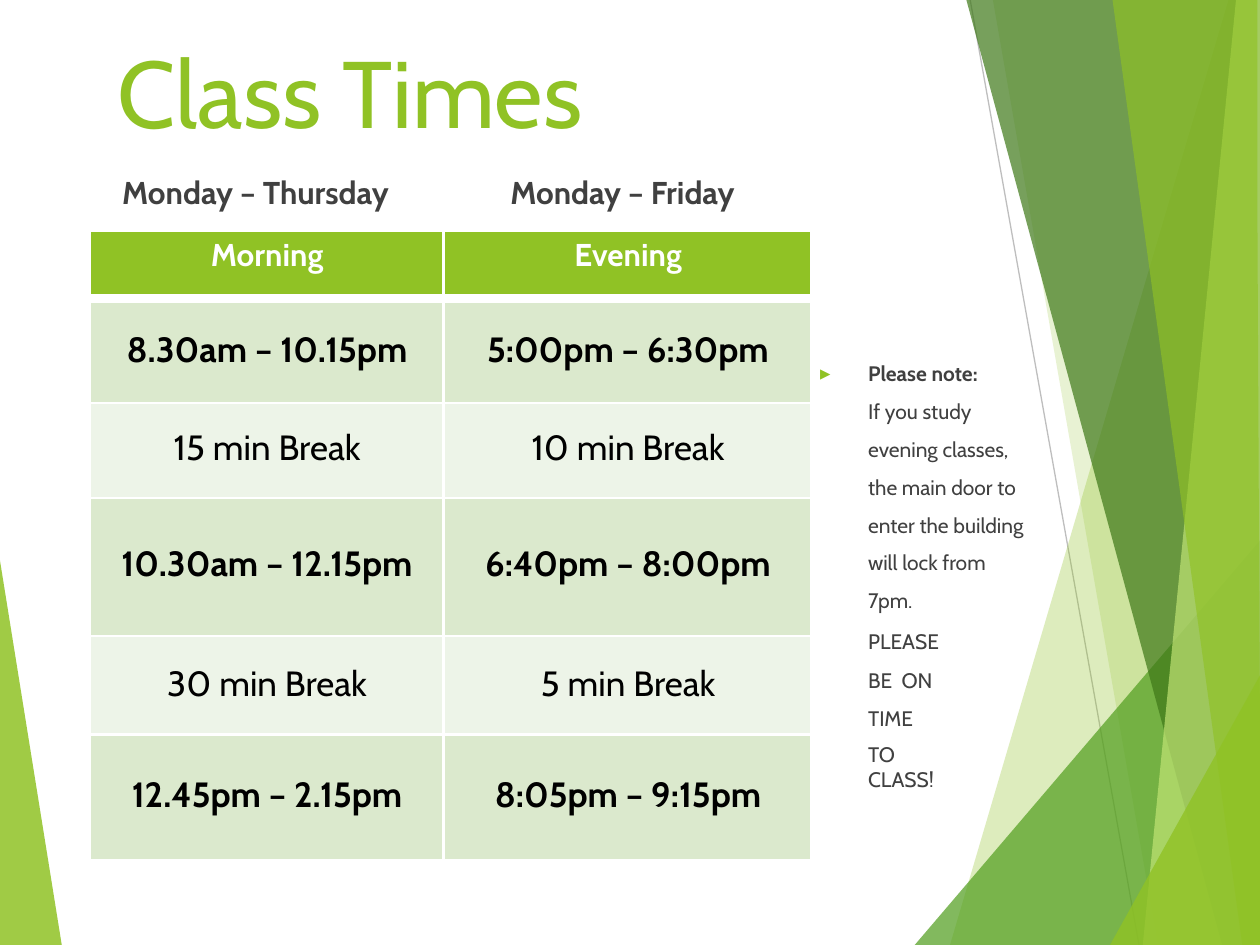
from dataclasses import dataclass

from lxml import etree
from pptx import Presentation
from pptx import util as u
from pptx.dml.color import RGBColor
from pptx.enum import shapes, text
from pptx.oxml import ns


@dataclass(frozen=True)
class Theme:
    font: str = "Cabin"
    bullet_font: str = "DejaVu Sans Mono"
    green: str = "90C225"
    leaf: str = "539F20"
    forest: str = "3E7818"
    lime: str = "C0E374"
    band: str = "DBE9CD"
    pale_band: str = "EDF4E8"
    text: str = "404040"
    black: str = "000000"
    white: str = "FFFFFF"
    rule: str = "BEBEBE"
    title_size: int = 54
    heading_size: int = 18
    cell_size: int = 20
    note_size: int = 12


THEME = Theme()

# Points, colour, opacity in percent
FACETS = [
    ([(9.75, 0), (7.54, 7.5), (10, 7.5), (10, 0)], THEME.green, 30),
    ([(10, 0), (7.88, 0), (9.19, 7.5), (10, 7.5)], THEME.green, 20),
    ([(10, 4.29), (7.26, 7.5), (10, 7.5)], THEME.leaf, 72),
    ([(10, 0), (7.67, 0), (9.7, 7.5), (10, 7.5)], THEME.forest, 70),
    ([(10, 0), (9.81, 0), (9.07, 7.5), (10, 7.5)], THEME.lime, 70),
    ([(9.98, 0), (8.83, 0), (9.86, 7.5), (10, 7.5), (10, 5.83), (9.98, 1.72)],
     THEME.green, 65),
    ([(10, 5.36), (8.81, 7.5), (10, 7.5)], THEME.green, 80),
    ([(0, 4.45), (0, 7.5), (0.49, 7.5)], THEME.green, 85),
]

COLUMN_WIDTHS = [2.8, 2.91]
# Row height, top margin, fill, text colour, bold, morning, evening
TIMETABLE = [
    (0.53, 0.03, THEME.green, THEME.white, True, "Morning", "Evening"),
    (0.83, 0.24, THEME.band, THEME.black, True, "8.30am – 10.15pm", "5:00pm – 6:30pm"),
    (0.75, 0.19, THEME.pale_band, THEME.black, False, "15 min Break", "10 min Break"),
    (1.1, 0.36, THEME.band, THEME.black, True, "10.30am – 12.15pm", "6:40pm – 8:00pm"),
    (0.78, 0.21, THEME.pale_band, THEME.black, False, "30 min Break", "5 min Break"),
    (0.99, 0.31, THEME.band, THEME.black, True, "12.45pm – 2.15pm", "8:05pm – 9:15pm"),
]

# Text, bold, line spacing, space before in points, right margin in inches
NOTES = [
    ("Please note:", True, 1.0, 0, 0),
    ("If you study evening classes, the main door to enter the building "
     "will lock from 7pm.", False, 1.5, 0.3, 0.08),
    ("PLEASE BE  ON TIME", False, u.Pt(22), 1.6, 0.7),
    ("TO CLASS!", False, 1.0, 5.7, 0.7),
]


def add_xml(parent, tag, **attributes):
    return etree.SubElement(parent, ns.qn(tag), attributes)


def style_runs(paragraph, size, color, bold=False):
    for run in paragraph.runs:
        run.font.name = THEME.font
        run.font.size = u.Pt(size)
        run.font.bold = bold
        run.font.color.rgb = RGBColor.from_string(color)


def add_facet(slide, points, color, opacity):
    start, *others = [(u.Inches(x), u.Inches(y)) for x, y in points]
    builder = slide.shapes.build_freeform(*start)
    builder.add_line_segments(others, close=True)
    shape = builder.convert_to_shape()
    shape.shadow.inherit = False
    shape.line.fill.background()
    shape.fill.solid()
    shape.fill.fore_color.rgb = RGBColor.from_string(color)
    color_element = shape.fill._xPr.find(".//" + ns.qn("a:srgbClr"))
    add_xml(color_element, "a:alpha", val=str(opacity * 1000))


def add_rule(slide):
    rule = slide.shapes.add_connector(
        shapes.MSO_CONNECTOR.STRAIGHT,
        u.Inches(7.7), 0, u.Inches(9.04), u.Inches(7.5))
    rule.line.color.rgb = RGBColor.from_string(THEME.rule)
    rule.line.width = u.Pt(0.75)
    add_xml(rule._element.spPr, "a:effectLst")


def add_text_box(slide, left, top, width, height, margin_top=0.01):
    frame = slide.shapes.add_textbox(
        *(u.Inches(value) for value in (left, top, width, height))).text_frame
    frame.word_wrap = True
    frame.margin_left = frame.margin_right = frame.margin_bottom = 0
    frame.margin_top = u.Inches(margin_top)
    return frame


def add_title(slide):
    frame = add_text_box(slide, 0.93, 0.26, 3.88, 0.93)
    frame.text = "Class Times"
    style_runs(frame.paragraphs[0], THEME.title_size, THEME.green)


def add_day_headings(slide):
    frame = add_text_box(slide, 0.97, 1.36, 4.96, 0.33)
    frame.text = "Monday – Thursday\tMonday – Friday"
    paragraph = frame.paragraphs[0]
    style_runs(paragraph, THEME.heading_size, THEME.text, bold=True)
    tabs = add_xml(paragraph._p.get_or_add_pPr(), "a:tabLst")
    add_xml(tabs, "a:tab", pos=str(u.Inches(3.08)), algn="l")


def add_bullet(properties):
    properties.set("indent", str(u.Inches(-0.38)))
    color = add_xml(properties, "a:buClr")
    add_xml(color, "a:srgbClr", val=THEME.green)
    add_xml(properties, "a:buSzPct", val="83000")
    add_xml(properties, "a:buFont", typeface=THEME.bullet_font)
    add_xml(properties, "a:buChar", char="▶")


def add_notes_column(slide):
    frame = add_text_box(slide, 6.5, 2.74, 1.74, 3.05, margin_top=0.12)
    for index, (words, bold, spacing, before, margin_right) in enumerate(NOTES):
        paragraph = frame.add_paragraph() if index else frame.paragraphs[0]
        paragraph.text = words
        paragraph.line_spacing = spacing
        paragraph.space_before = u.Pt(before)
        style_runs(paragraph, THEME.note_size, THEME.text, bold)
        properties = paragraph._p.get_or_add_pPr()
        properties.set("marL", str(u.Inches(0.39)))
        properties.set("marR", str(u.Inches(margin_right)))
        if index == 0:
            add_bullet(properties)


def add_border(cell, side, width):
    line = add_xml(cell._tc.get_or_add_tcPr(), f"a:ln{side}", w=str(u.Pt(width)))
    if width:
        fill = add_xml(line, "a:solidFill")
        add_xml(fill, "a:srgbClr", val=THEME.white)
    else:
        add_xml(line, "a:noFill")


def add_borders(cell, row, column):
    """Draw white lines between cells and none round the outside."""
    last_row = len(TIMETABLE) - 1
    add_border(cell, "L", 2.25 if column else 0)
    add_border(cell, "R", 0 if column else 2.25)
    add_border(cell, "T", {0: 0, 1: 6}.get(row, 1.5))
    add_border(cell, "B", {0: 6, last_row: 0}.get(row, 1.5))


def add_timetable(slide):
    height = sum(row[0] for row in TIMETABLE)
    table = slide.shapes.add_table(
        len(TIMETABLE), len(COLUMN_WIDTHS), u.Inches(0.72), u.Inches(1.84),
        u.Inches(sum(COLUMN_WIDTHS)), u.Inches(height)).table
    for column, width in enumerate(COLUMN_WIDTHS):
        table.columns[column].width = u.Inches(width)
    for row, (height, margin, fill, color, bold, *entries) in enumerate(TIMETABLE):
        table.rows[row].height = u.Inches(height)
        for column, entry in enumerate(entries):
            cell = table.cell(row, column)
            cell.margin_left = u.Inches(0.02 * column)
            cell.margin_right = cell.margin_bottom = 0
            cell.margin_top = u.Inches(margin)
            add_borders(cell, row, column)
            cell.fill.solid()
            cell.fill.fore_color.rgb = RGBColor.from_string(fill)
            cell.text_frame.text = entry
            paragraph = cell.text_frame.paragraphs[0]
            paragraph.alignment = text.PP_ALIGN.CENTER
            size = THEME.cell_size if row else THEME.heading_size
            style_runs(paragraph, size, color, bold)


def main():
    presentation = Presentation()
    presentation.slide_width = u.Inches(10)
    presentation.slide_height = u.Inches(7.5)
    slide = presentation.slides.add_slide(presentation.slide_layouts[6])
    add_rule(slide)
    for facet in FACETS:
        add_facet(slide, *facet)
    add_title(slide)
    add_day_headings(slide)
    add_notes_column(slide)
    add_timetable(slide)
    presentation.save("out.pptx")


if __name__ == "__main__":
    main()
